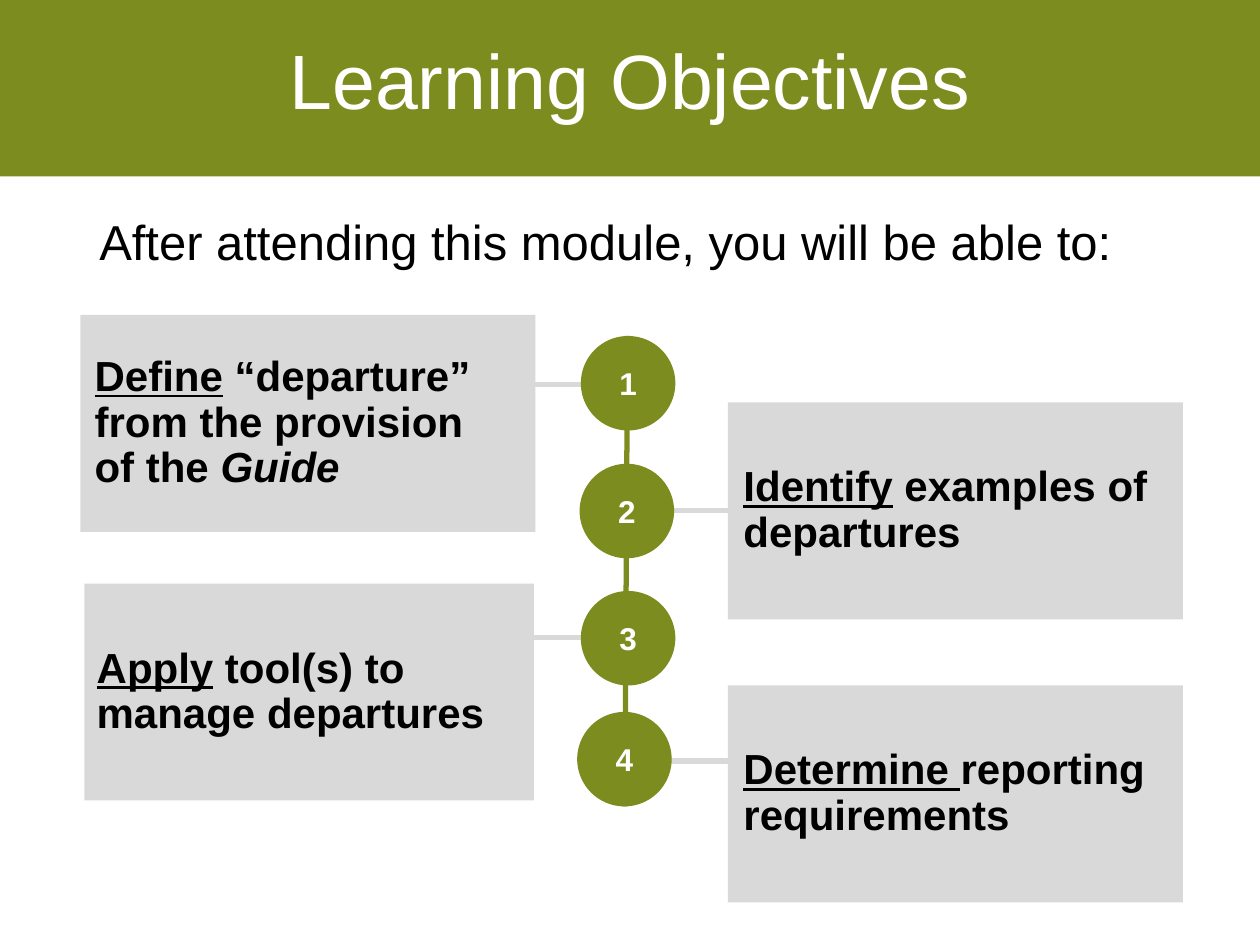
from lxml import etree
from pptx import Presentation
from pptx.dml.color import RGBColor
from pptx.enum.shapes import MSO_CONNECTOR, MSO_SHAPE
from pptx.enum.text import MSO_ANCHOR, PP_ALIGN
from pptx.oxml.ns import qn
from pptx.util import Pt

LINE = MSO_CONNECTOR.STRAIGHT
RECT, OVAL = MSO_SHAPE.RECTANGLE, MSO_SHAPE.OVAL
MIDDLE, BOTTOM = MSO_ANCHOR.MIDDLE, MSO_ANCHOR.BOTTOM
LEFT, CENTER = PP_ALIGN.LEFT, PP_ALIGN.CENTER


def color(code):
    return RGBColor.from_string(code)


class Deck:
    font = "Arial"
    green, gray, black, white = "7D8C1F", "D9D9D9", "000000", "FFFFFF"

    def __init__(self, wide, high):
        self.file = Presentation()
        self.file.slide_width, self.file.slide_height = Pt(wide), Pt(high)
        self.slide = self.file.slides.add_slide(self.file.slide_layouts[5])

    def label(self, shape, lines, size, ink, align=LEFT, anchor=MIDDLE, space=0.9, before=0):
        frame = shape.text_frame
        frame.word_wrap = True
        frame.vertical_anchor = anchor
        para = frame.paragraphs[0]
        para.alignment = align
        para.line_spacing = space
        para.space_before = Pt(before)
        for row, runs in enumerate(lines):
            if row:
                para.add_line_break()
            for text, style in runs:
                run = para.add_run()
                run.text = text
                font = run.font
                font.name, font.size = self.font, Pt(size)
                font.color.rgb = color(ink)
                font.bold = "b" in style
                font.italic = "i" in style
                font.underline = "u" in style

    def title(self, text, box):
        shape = self.slide.shapes.title
        shape.left, shape.top, shape.width, shape.height = map(Pt, box)
        shape.fill.solid()
        shape.fill.fore_color.rgb = color(self.green)
        self.label(shape, [[(text, "")]], 44, self.white, CENTER)

    def shape(self, kind, box, fill):
        shape = self.slide.shapes.add_shape(kind, *map(Pt, box))
        shape.shadow.inherit = False
        shape.fill.solid()
        shape.fill.fore_color.rgb = color(fill)
        shape.line.fill.background()
        return shape

    def text(self, lines, box, size, anchor=MIDDLE):
        shape = self.slide.shapes.add_textbox(*map(Pt, box))
        self.label(shape, lines, size, self.black, anchor=anchor, before=7.5)

    def line(self, start, end, ink):
        line = self.slide.shapes.add_connector(LINE, *map(Pt, start + end))
        line.line.color.rgb = color(ink)
        line.line.width = Pt(3)
        etree.SubElement(line._element.spPr, qn("a:effectLst"))

    def badge(self, text, left, top):
        shape = self.shape(OVAL, (left, top, 54, 54), self.green)
        self.label(shape, [[(text, "b")]], 18, self.white, CENTER, space=1)


def main():
    deck = Deck(720, 540)
    deck.title("Learning Objectives", (0, -3.6, 720, 104.4))
    intro = "After attending this module, you will be able to:"
    deck.text([[(intro, "")]], (49.7, 103.7, 670, 54.7), 28, BOTTOM)

    goals = [
        ((46, 180, 260, 124), 47, (302.4, 219.6), (331.9, 192),
         [[("Define", "bu"), (" “departure” from the provision ", "b")],
          [("of the ", "b"), ("Guide", "bi")]]),
        ((416, 230, 260, 124), 417.8, (358.6, 291.6), (331.2, 265),
         [[("Identify", "bu"), (" examples of departures", "b")]]),
        ((48.2, 333.5, 257, 124), 48.2, (301, 364.3), (331.9, 337.7),
         [[("Apply", "bu"), (" tool(s) to manage departures", "b")]]),
        ((416, 391.7, 260, 124), 417.8, (370.8, 434.9), (329.8, 406.8),
         [[("Determine ", "bu"), ("reporting requirements", "b")]]),
    ]
    deck.line((358.6, 192), (357.1, 460.8), deck.green)
    for step, (panel, left, link, dot, lines) in enumerate(goals, 1):
        deck.shape(RECT, panel, deck.gray)
        deck.line(link, (link[0] + 57.6, link[1]), deck.gray)
        deck.text(lines, (left, panel[1], 257.5, panel[3]), 24)
        deck.badge(str(step), *dot)

    deck.file.save("out.pptx")


if __name__ == "__main__":
    main()
